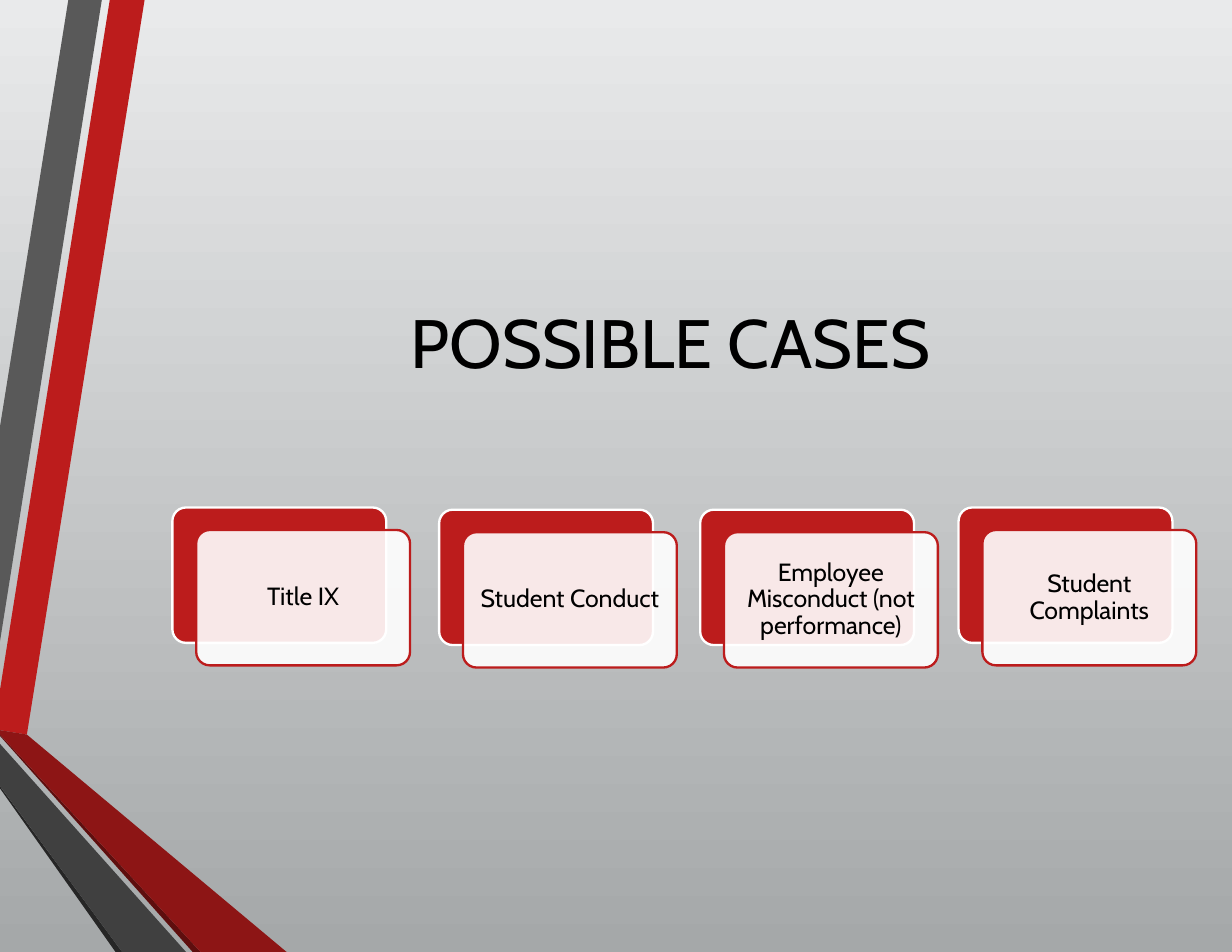
from pptx import Presentation
from pptx.dml.color import RGBColor
from pptx.enum.shapes import MSO_SHAPE
from pptx.enum.text import MSO_ANCHOR, MSO_AUTO_SIZE, PP_ALIGN
from pptx.oxml.ns import qn
from pptx.util import Cm, Pt
from lxml import etree

ROUND = MSO_SHAPE.ROUNDED_RECTANGLE
MIDDLE = MSO_ANCHOR.MIDDLE
CENTER = PP_ALIGN.CENTER
NO_FIT = MSO_AUTO_SIZE.NONE

RED = RGBColor(0xBC, 0x1C, 0x1C)
MAROON = RGBColor(0x8D, 0x15, 0x15)
WINE = RGBColor(0x5E, 0x0E, 0x0E)
GREY = RGBColor(0x59, 0x59, 0x59)
SLATE = RGBColor(0x40, 0x40, 0x40)
COAL = RGBColor(0x26, 0x26, 0x26)
BLACK = RGBColor(0, 0, 0)
WHITE = RGBColor(0xFF, 0xFF, 0xFF)
LIGHT = RGBColor(0xE9, 0xEA, 0xEB)
DIM = RGBColor(0xA5, 0xA8, 0xA9)

FONT = "Cabin"
WIDTH, HEIGHT = 27.94, 21.59
CARD_W, CARD_H = 4.85, 3.07
SHIFT_X, SHIFT_Y = 0.54, 0.51

BANDS = [
    (RED, [(0, 15.65), (0, 16.56), (0.61, 16.66), (3.28, 0), (2.49, 0)]),
    (GREY, [(2.31, 0), (1.55, 0), (0, 9.68), (0, 14.55)]),
    (COAL, [(0, 17.83), (0, 17.88), (2.62, HEIGHT), (2.77, HEIGHT)]),
    (WINE, [(0, 16.66), (0, 16.69), (4.37, HEIGHT), (4.55, HEIGHT)]),
    (MAROON, [(0, 16.66), (4.55, HEIGHT), (6.5, HEIGHT), (0.61, 16.66),
              (0, 16.56)]),
    (SLATE, [(0, 17.83), (2.77, HEIGHT), (4.22, HEIGHT), (0, 16.87)]),
]

CASES = [
    ("Title IX", 3.91, 11.51),
    ("Student Conduct", 9.96, 11.56),
    ("Employee Misconduct (not performance)", 15.88, 11.56),
    ("Student Complaints", 21.74, 11.51),
]


def paint_back(slide):
    fill = slide.background.fill
    fill.gradient()
    fill.gradient_angle = 270
    for stop, color in zip(fill.gradient_stops, (LIGHT, DIM)):
        stop.color.rgb = color


def add_bands(slide, left, top):
    for color, points in BANDS:
        spots = [(Cm(left + x), Cm(top + y)) for x, y in points]
        pen = slide.shapes.build_freeform(*spots[0])
        pen.add_line_segments(spots[1:], close=True)
        band = pen.convert_to_shape()
        band.shadow.inherit = False
        band.fill.solid()
        band.fill.fore_color.rgb = color
        band.line.fill.background()


def write(frame, text, size):
    frame.text = text
    frame.word_wrap = True
    frame.auto_size = NO_FIT
    frame.vertical_anchor = MIDDLE
    para = frame.paragraphs[0]
    para.alignment = CENTER
    para.font.name = FONT
    para.font.size = Pt(size)
    para.font.color.rgb = BLACK
    return para


def set_title(slide, left, top, width, height):
    title = slide.shapes.title
    title.left, title.top = Cm(left), Cm(top)
    title.width, title.height = Cm(width), Cm(height)
    write(title.text_frame, "POSSIBLE CASES", 44)


def add_panel(slide, left, top, color, edge):
    panel = slide.shapes.add_shape(
        ROUND, Cm(left), Cm(top), Cm(CARD_W), Cm(CARD_H))
    panel.adjustments[0] = 0.1
    panel.shadow.inherit = False
    panel.fill.solid()
    panel.fill.fore_color.rgb = color
    panel.line.color.rgb = edge
    panel.line.width = Pt(1.5)
    return panel


def add_card(slide, text, left, top):
    add_panel(slide, left, top, RED, WHITE)
    front = add_panel(slide, left + SHIFT_X, top + SHIFT_Y, WHITE, RED)
    tint = front.fill._xPr.find(qn("a:solidFill"))[0]
    etree.SubElement(tint, qn("a:alpha"), val="90000")
    frame = front.text_frame
    frame.margin_left = frame.margin_right = Cm(0.25)
    frame.margin_top = frame.margin_bottom = Cm(0.25)
    write(frame, text, 16).line_spacing = 0.9


def main():
    deck = Presentation()
    deck.slide_width, deck.slide_height = Cm(WIDTH), Cm(HEIGHT)
    slide = deck.slides.add_slide(deck.slide_layouts[5])
    paint_back(slide)
    add_bands(slide, 0, 0)
    set_title(slide, 4.04, 4.24, 22.33, 6.99)
    for text, left, top in CASES:
        add_card(slide, text, left, top)
    deck.save("out.pptx")


if __name__ == "__main__":
    main()
